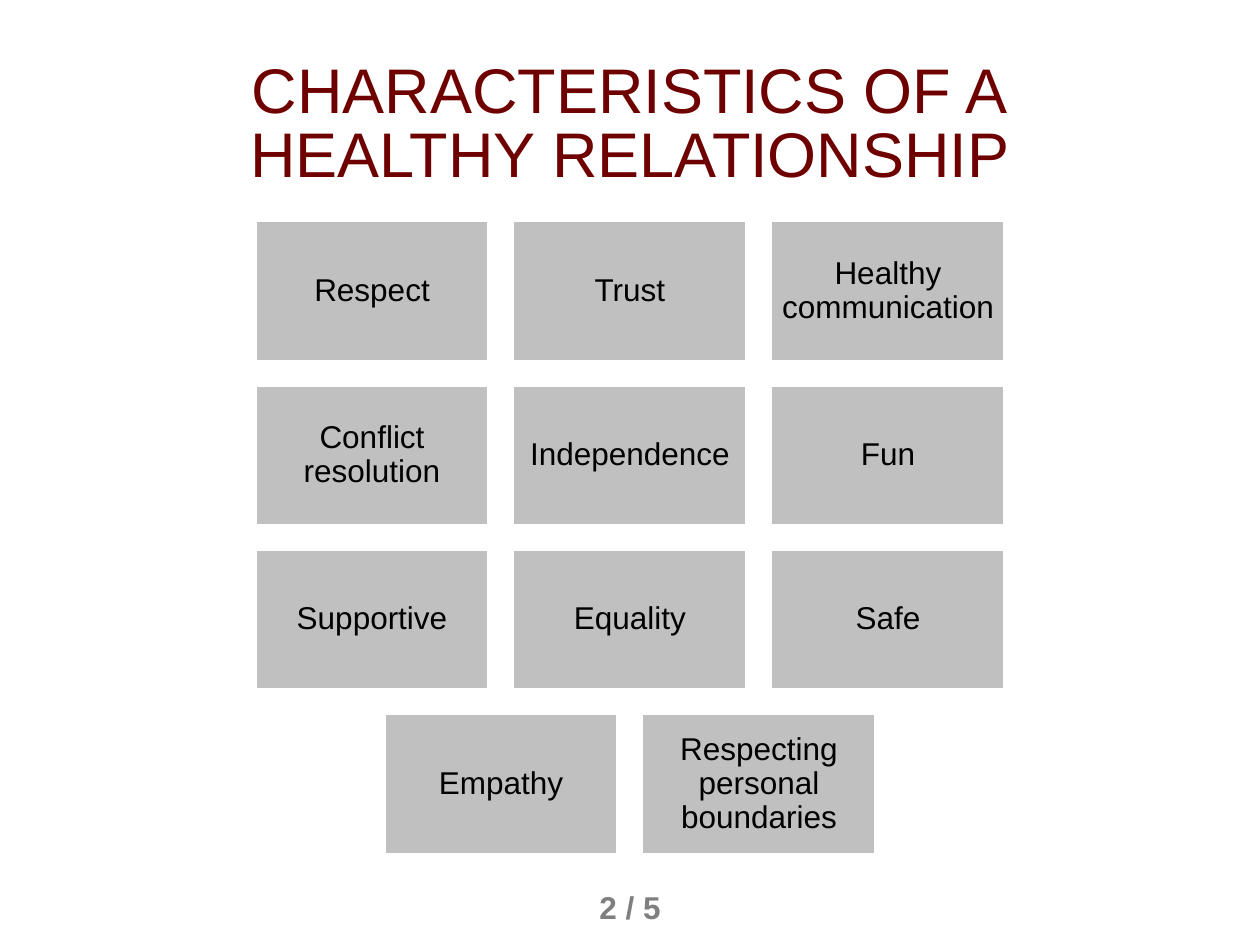
from pptx import Presentation
from pptx import util as u
from pptx.dml.color import RGBColor
from pptx.enum import shapes, text

TITLE = "CHARACTERISTICS OF A\vHEALTHY RELATIONSHIP"
ROWS = [
    ["Respect", "Trust", "Healthy communication"],
    ["Conflict resolution", "Independence", "Fun"],
    ["Supportive", "Equality", "Safe"],
    ["Empathy", "Respecting personal boundaries"],
]
PAGE = "2 / 5"
COLORS = {"title": "6E0000", "card": "C0C0C0", "border": "FFFFFF",
          "body": "000000", "page": "7F7F7F"}
FONT = "Arial"
SLIDE_WIDTH, SLIDE_HEIGHT = 720, 540
CARD_WIDTH, CARD_HEIGHT, GAP = 134, 80.5, 13.4
GRID_TOP = 126
CARD_INSET = 5


def color(name):
    return RGBColor.from_string(COLORS[name])


def write(shape, content, size=18, ink="body", bold=False, spacing=1.0,
          after=0, anchor=text.MSO_ANCHOR.TOP, inset=None,
          fit=text.MSO_AUTO_SIZE.NONE):
    frame = shape.text_frame
    frame.word_wrap = True
    frame.auto_size = fit
    frame.vertical_anchor = anchor
    if inset is not None:
        frame.margin_left = frame.margin_right = u.Pt(inset)
        frame.margin_top = frame.margin_bottom = u.Pt(inset)
    paragraph = frame.paragraphs[0]
    paragraph.text = content
    paragraph.alignment = text.PP_ALIGN.CENTER
    paragraph.line_spacing = spacing
    paragraph.space_after = u.Pt(after)
    for run in paragraph.runs:
        run.font.name = FONT
        run.font.size = u.Pt(size)
        run.font.bold = bold
        run.font.color.rgb = color(ink)


def add_label(slide, left, top, width, height, content, **style):
    box = slide.shapes.add_textbox(u.Pt(left), u.Pt(top), u.Pt(width), u.Pt(height))
    write(box, content, fit=text.MSO_AUTO_SIZE.SHAPE_TO_FIT_TEXT, **style)


def add_card(slide, left, top, content):
    card = slide.shapes.add_shape(shapes.MSO_SHAPE.RECTANGLE, u.Pt(left), u.Pt(top),
                                  u.Pt(CARD_WIDTH), u.Pt(CARD_HEIGHT))
    card.shadow.inherit = False
    card.fill.solid()
    card.fill.fore_color.rgb = color("card")
    card.line.color.rgb = color("border")
    card.line.width = u.Pt(2)
    write(card, content, spacing=0.9, after=6.3,
          anchor=text.MSO_ANCHOR.MIDDLE, inset=CARD_INSET)


def main():
    presentation = Presentation()
    presentation.slide_width = u.Pt(SLIDE_WIDTH)
    presentation.slide_height = u.Pt(SLIDE_HEIGHT)
    slide = presentation.slides.add_slide(presentation.slide_layouts[6])

    add_label(slide, 31.7, 31.7, 656.6, 82.8, TITLE, size=36, ink="title", spacing=0.85)
    for row, names in enumerate(ROWS):
        row_width = len(names) * (CARD_WIDTH + GAP) - GAP
        row_left = (SLIDE_WIDTH - row_width) / 2
        for column, name in enumerate(names):
            add_card(slide, row_left + column * (CARD_WIDTH + GAP),
                     GRID_TOP + row * (CARD_HEIGHT + GAP), name)
    add_label(slide, 324, 504, 72, 29, PAGE, ink="page", bold=True)

    presentation.save("out.pptx")


if __name__ == "__main__":
    main()
